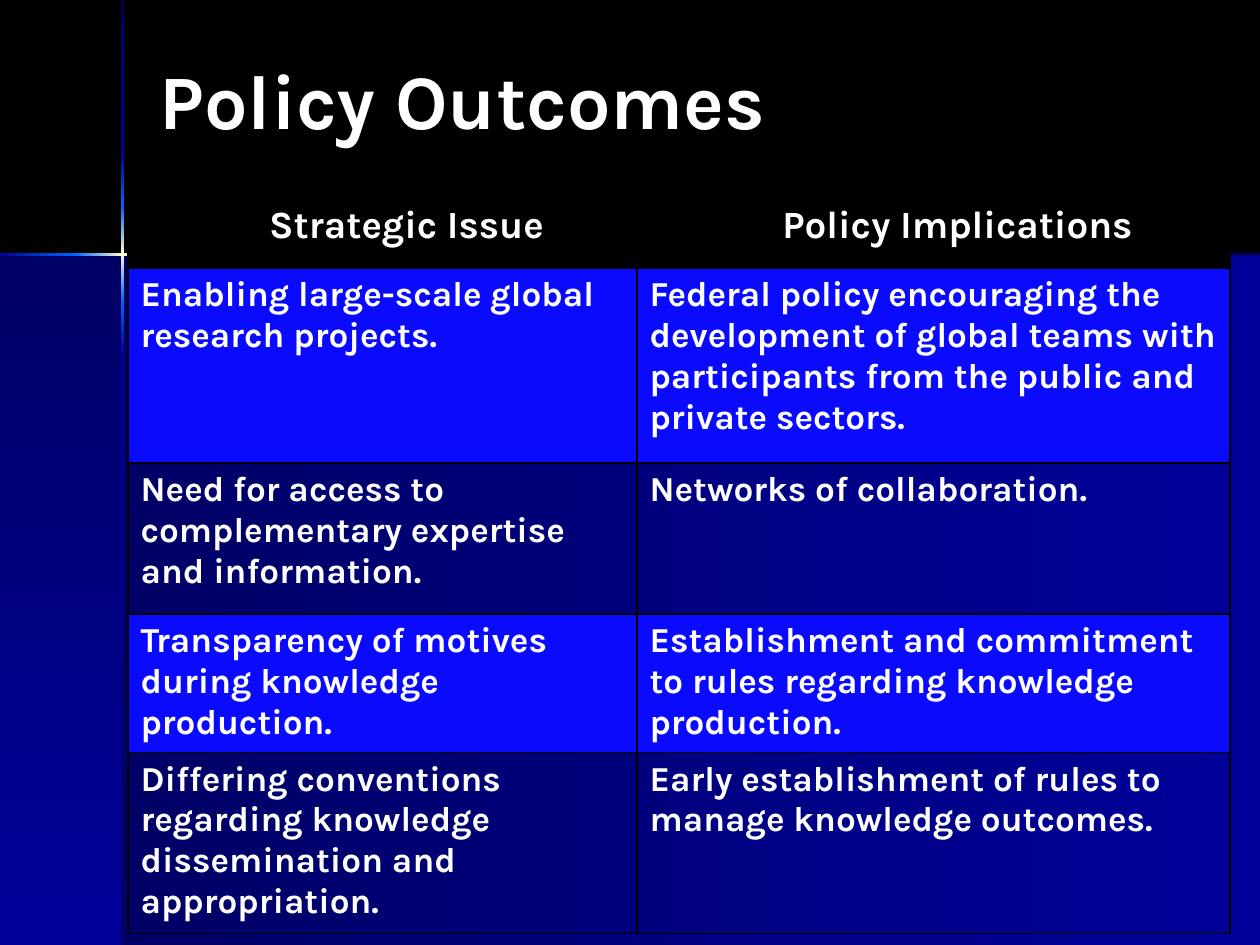
"""Build the Policy Outcomes slide: glowing cross backdrop, title and table."""
from itertools import pairwise

from lxml.etree import SubElement
from pptx import Presentation
from pptx.dml.color import RGBColor
from pptx.enum.shapes import MSO_SHAPE as SHAPE
from pptx.enum.text import MSO_ANCHOR as ANCHOR, PP_ALIGN as ALIGN
from pptx.oxml.ns import qn
from pptx.util import Emu, Pt

FONT = "Karla"
WHITE, BLACK, BAND = "FFFFFF", "000000", "0A0AFF"
NAVY, BLUE, BRIGHT, GLOW = "000066", "000099", "0066FF", "FFFFCC"
WIDTH, HEIGHT = 1260, 945
CROSS_X, CROSS_Y, LINE = 121, 253, 3
RAMPS = [
    (NAVY, BLUE),
    (BLUE, BRIGHT),
    (BRIGHT, GLOW, BRIGHT),
    (BRIGHT, BLUE),
    (BLUE, NAVY),
]
V_STOPS = [1, 152, 208, 300, 355, HEIGHT]
H_STOPS = [0, 76, 168, 223, WIDTH]
COLS = [509, 593]
ROW_HEIGHTS = [71, 195, 151, 121, 151]
ROWS = [
    ("Strategic Issue", "Policy Implications"),
    ("Enabling large-scale global research projects.",
     "Federal policy encouraging the development of global teams with "
     "participants from the public and private sectors."),
    ("Need for access to complementary expertise and information.",
     "Networks of collaboration."),
    ("Transparency of motives during knowledge production.",
     "Establishment and commitment to rules regarding knowledge production."),
    ("Differing conventions regarding knowledge dissemination and appropriation.",
     "Early establishment of rules to manage knowledge outcomes."),
]


def px(n):
    """Turn pixels into EMU."""
    return Emu(round(n * 914400 / 126))


def color(value):
    """Turn a hex string into a colour."""
    return RGBColor.from_string(value)


def add_gradient(slide, x, y, w, h, ramp, vertical):
    """Add a borderless rectangle with evenly spaced gradient stops."""
    s = slide.shapes.add_shape(SHAPE.RECTANGLE, px(x), px(y), px(w), px(h))
    s.shadow.inherit = False
    s.line.fill.background()
    s.fill.gradient()
    s.fill.gradient_angle = 270 if vertical else 0
    stops = s._element.spPr.find(".//" + qn("a:gsLst"))
    stops.clear()
    for i, value in enumerate(ramp):
        stop = SubElement(stops, qn("a:gs"), pos=str(100000 * i // (len(ramp) - 1)))
        SubElement(stop, qn("a:srgbClr"), val=value)


def add_backdrop(slide):
    """Add the two panels and the glowing cross."""
    panel_x, panel_y = CROSS_X + 1, CROSS_Y + 1
    panel_h = HEIGHT - panel_y
    add_gradient(slide, panel_x, panel_y, WIDTH - panel_x, panel_h, RAMPS[0], False)
    add_gradient(slide, 0, panel_y, panel_x, panel_h, RAMPS[0], True)
    for (a, b), ramp in zip(pairwise(V_STOPS), RAMPS):
        add_gradient(slide, CROSS_X, a, LINE, b - a, ramp, True)
    for (a, b), ramp in zip(pairwise(H_STOPS), RAMPS[1:]):
        add_gradient(slide, a, CROSS_Y, b - a, LINE, ramp, False)


def write(tf, text, size):
    """Write one bold white paragraph and return it."""
    tf.text = text
    p = tf.paragraphs[0]
    font = p.runs[0].font
    font.name, font.size, font.bold = FONT, Pt(size), True
    font.color.rgb = color(WHITE)
    return p


def add_title(slide, text):
    """Add the slide title."""
    tf = slide.shapes.add_textbox(px(147), px(0), px(1040), px(198)).text_frame
    tf.word_wrap = True
    tf.vertical_anchor = ANCHOR.MIDDLE
    write(tf, text, 44)


def add_borders(cell):
    """Draw a thin black line on each side of a cell."""
    tc_pr = cell._tc.get_or_add_tcPr()
    for side in "LRTB":
        ln = SubElement(tc_pr, qn(f"a:ln{side}"), w=str(Pt(1)))
        fill = SubElement(ln, qn("a:solidFill"))
        SubElement(fill, qn("a:srgbClr"), val=BLACK)


def fill_cell(cell, text, row):
    """Format one cell by its row."""
    add_borders(cell)
    p = write(cell.text_frame, text, 20 if row else 22)
    if row == 0:
        p.alignment = ALIGN.CENTER
        p_pr = p._p.get_or_add_pPr()
        p_pr.set("marL", str(px(48)))
        p_pr.set("indent", "0")
    if row and row % 2 == 0:
        cell.fill.background()
    else:
        cell.fill.solid()
        cell.fill.fore_color.rgb = color(BAND if row else BLACK)


def add_policy_table(slide):
    """Add the table of issues and implications."""
    table = slide.shapes.add_table(
        len(ROWS), len(COLS), px(128), px(197), px(sum(COLS)), px(sum(ROW_HEIGHTS))
    ).table
    table.first_row = table.horz_banding = False
    for column, width in zip(table.columns, COLS):
        column.width = px(width)
    for r, (texts, height) in enumerate(zip(ROWS, ROW_HEIGHTS)):
        table.rows[r].height = px(height)
        for c, text in enumerate(texts):
            fill_cell(table.cell(r, c), text, r)


def main():
    """Build and save the slide."""
    prs = Presentation()
    prs.slide_width, prs.slide_height = px(WIDTH), px(HEIGHT)
    slide = prs.slides.add_slide(prs.slide_layouts[6])
    slide.background.fill.solid()
    slide.background.fill.fore_color.rgb = color(BLACK)
    add_backdrop(slide)
    add_title(slide, "Policy Outcomes")
    add_policy_table(slide)
    prs.save("out.pptx")


if __name__ == "__main__":
    main()
